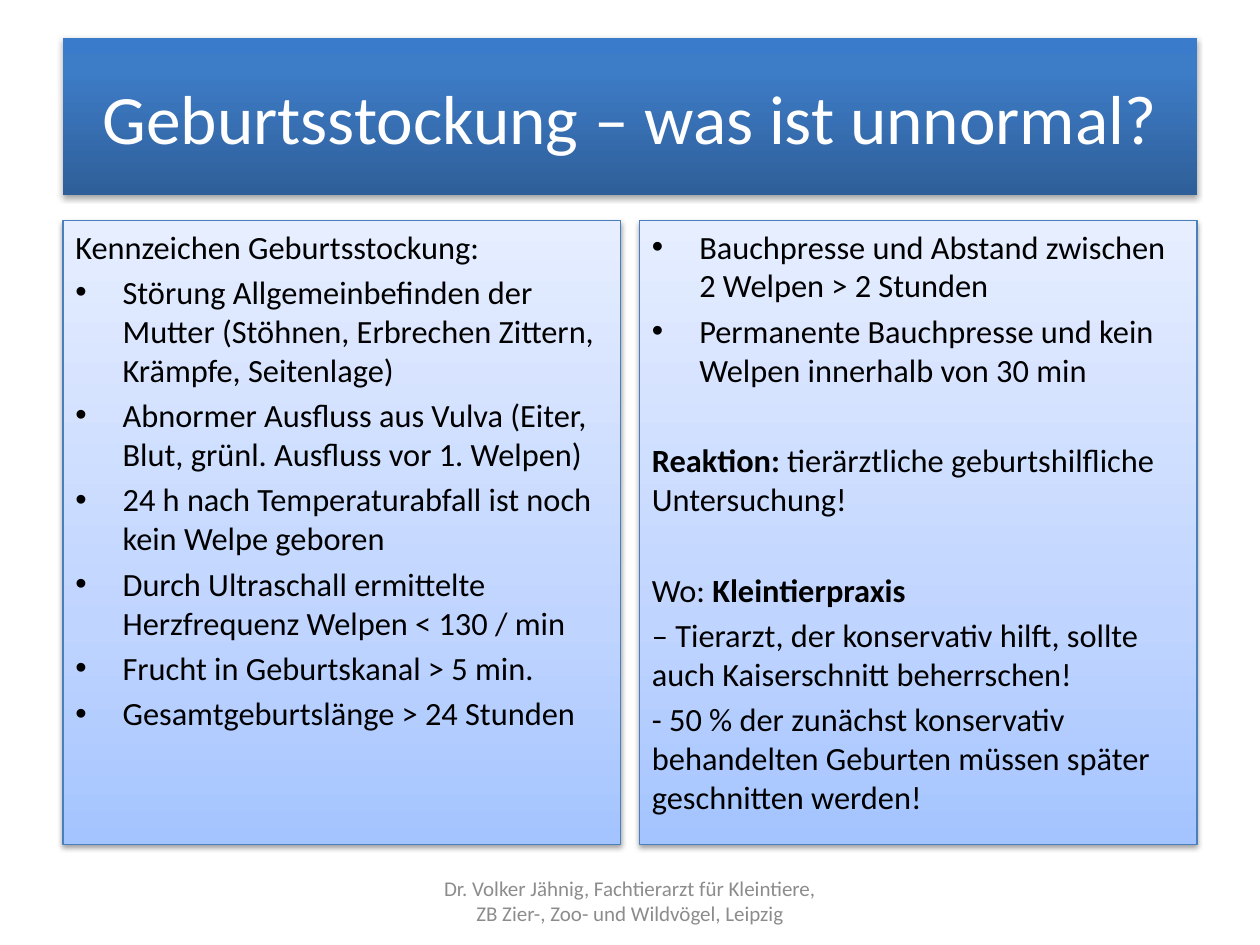
from lxml import etree
from pptx import Presentation
from pptx.dml.color import RGBColor
from pptx.enum.shapes import MSO_SHAPE
from pptx.enum.text import MSO_ANCHOR, MSO_AUTO_SIZE, PP_ALIGN
from pptx.oxml.ns import qn
from pptx.util import Pt

RECTANGLE = MSO_SHAPE.RECTANGLE
TOP, MIDDLE = MSO_ANCHOR.TOP, MSO_ANCHOR.MIDDLE
LEFT, CENTER = PP_ALIGN.LEFT, PP_ALIGN.CENTER
NO_AUTOFIT = MSO_AUTO_SIZE.NONE

BLACK = RGBColor(0x00, 0x00, 0x00)
WHITE = RGBColor(0xFF, 0xFF, 0xFF)
GRAY = RGBColor(0x8C, 0x8C, 0x8C)
BORDER_BLUE = RGBColor(0x4B, 0x7E, 0xBC)
# Gradient stops (percent, colour), running from the bottom to the top
TITLE_GRADIENT = [
    (0, RGBColor(0x2F, 0x5F, 0x99)),
    (80, RGBColor(0x3D, 0x7C, 0xC7)),
    (100, RGBColor(0x3A, 0x7C, 0xCB)),
]
PANEL_GRADIENT = [
    (0, RGBColor(0xA4, 0xC4, 0xFF)),
    (35, RGBColor(0xBF, 0xD4, 0xFF)),
    (100, RGBColor(0xE6, 0xEE, 0xFF)),
]

MARGIN = 36
PANEL_WIDTH = 318.5
SLIDE_WIDTH, SLIDE_HEIGHT = 720, 540

BULLET, PLAIN, NEW_SECTION = "bullet", "plain", "new section"
# Each paragraph: kind, then its runs; every second run is bold
SIGNS = [
    (PLAIN, "Kennzeichen Geburtsstockung:"),
    (BULLET, "Störung Allgemeinbefinden der Mutter (Stöhnen, Erbrechen Zittern, "
             "Krämpfe, Seitenlage)"),
    (BULLET, "Abnormer Ausfluss aus Vulva (Eiter, Blut, grünl. Ausfluss vor 1. Welpen)"),
    (BULLET, "24 h nach Temperaturabfall ist noch kein Welpe geboren"),
    (BULLET, "Durch Ultraschall ermittelte Herzfrequenz Welpen < 130 / min"),
    (BULLET, "Frucht in Geburtskanal > 5 min."),
    (BULLET, "Gesamtgeburtslänge > 24 Stunden"),
]
REACTION = [
    (BULLET, "Bauchpresse und Abstand zwischen 2 Welpen > 2 Stunden"),
    (BULLET, "Permanente Bauchpresse und kein Welpen innerhalb von 30 min"),
    (NEW_SECTION, "", "Reaktion: ", "tierärztliche geburtshilfliche Untersuchung!"),
    (NEW_SECTION, "Wo: ", "Kleintierpraxis"),
    (PLAIN, "– Tierarzt, der konservativ hilft, sollte auch Kaiserschnitt beherrschen!"),
    (PLAIN, "- 50 % der zunächst konservativ behandelten Geburten müssen später "
            "geschnitten werden!"),
]


class SlideBuilder:
    """Holds the text style and the slide being filled."""

    font_name = "Calibri"
    body_size = 18.5
    paragraph_gap = 3.7
    section_gap = 29.5
    bullet_indent = 27

    def __init__(self, presentation):
        self.slide = presentation.slides.add_slide(presentation.slide_layouts[5])

    def set_font(self, paragraph, size, color):
        paragraph.font.name = self.font_name
        paragraph.font.size = Pt(size)
        paragraph.font.color.rgb = color

    def prepare_frame(self, shape, anchor):
        frame = shape.text_frame
        frame.word_wrap = True
        frame.auto_size = NO_AUTOFIT
        frame.vertical_anchor = anchor
        return frame

    def place(self, shape, left, top, width, height):
        shape.left, shape.top = Pt(left), Pt(top)
        shape.width, shape.height = Pt(width), Pt(height)

    def fill_gradient(self, shape, stops):
        shape.fill.gradient()
        shape.fill.gradient_angle = 90
        stop_list = shape._element.spPr.find(qn("a:gradFill")).find(qn("a:gsLst"))
        for old_stop in list(stop_list):
            stop_list.remove(old_stop)
        for percent, color in stops:
            stop = etree.SubElement(stop_list, qn("a:gs"), pos=str(percent * 1000))
            etree.SubElement(stop, qn("a:srgbClr"), val=str(color))

    def add_shadow(self, shape, distance, opacity):
        shape.shadow.inherit = False
        effects = shape._element.spPr.find(qn("a:effectLst"))
        shadow = etree.SubElement(
            effects, qn("a:outerShdw"), blurRad=str(Pt(3.1)), dist=str(Pt(distance)),
            dir="5400000", rotWithShape="0")
        color = etree.SubElement(shadow, qn("a:srgbClr"), val=str(BLACK))
        etree.SubElement(color, qn("a:alpha"), val=str(opacity * 1000))

    def add_bullet(self, paragraph):
        properties = paragraph._p.get_or_add_pPr()
        properties.set("marL", str(Pt(self.bullet_indent)))
        properties.set("indent", str(-Pt(self.bullet_indent)))
        font = etree.Element(qn("a:buFont"), typeface="Arial")
        character = etree.Element(qn("a:buChar"), char="•")
        default_font = properties.find(qn("a:defRPr"))
        default_font.addprevious(font)
        default_font.addprevious(character)

    def title(self, text):
        shape = self.slide.shapes.title
        self.place(shape, MARGIN, 21.6, SLIDE_WIDTH - 2 * MARGIN, 90)
        self.fill_gradient(shape, TITLE_GRADIENT)
        shape.line.fill.background()
        self.add_shadow(shape, 1.8, 35)
        paragraph = self.prepare_frame(shape, MIDDLE).paragraphs[0]
        paragraph.text = text
        paragraph.alignment = CENTER
        self.set_font(paragraph, 39.6, WHITE)

    def panel(self, left, content):
        shape = self.slide.shapes.add_shape(
            RECTANGLE, Pt(left), Pt(126), Pt(PANEL_WIDTH), Pt(356.4))
        self.fill_gradient(shape, PANEL_GRADIENT)
        shape.line.color.rgb = BORDER_BLUE
        shape.line.width = Pt(0.75)
        self.add_shadow(shape, 1.6, 38)
        frame = self.prepare_frame(shape, TOP)
        for index, (kind, *runs) in enumerate(content):
            paragraph = frame.add_paragraph() if index else frame.paragraphs[0]
            paragraph.alignment = LEFT
            gap = self.section_gap if kind == NEW_SECTION else self.paragraph_gap
            paragraph.space_before = Pt(gap)
            self.set_font(paragraph, self.body_size, BLACK)
            if kind == BULLET:
                self.add_bullet(paragraph)
            for position, text in enumerate(runs):
                if text:
                    run = paragraph.add_run()
                    run.text = text
                    run.font.bold = position % 2 == 1

    def footer(self, text):
        shape = self.slide.shapes.add_textbox(Pt(246), Pt(500.5), Pt(228), Pt(28.75))
        paragraph = self.prepare_frame(shape, MIDDLE).paragraphs[0]
        paragraph.text = text
        paragraph.alignment = CENTER
        self.set_font(paragraph, 12, GRAY)


def main():
    presentation = Presentation()
    presentation.slide_width = Pt(SLIDE_WIDTH)
    presentation.slide_height = Pt(SLIDE_HEIGHT)
    builder = SlideBuilder(presentation)
    builder.title("Geburtsstockung – was ist unnormal?")
    builder.panel(MARGIN, SIGNS)
    builder.panel(SLIDE_WIDTH - MARGIN - PANEL_WIDTH, REACTION)
    builder.footer("Dr. Volker Jähnig, Fachtierarzt für Kleintiere, "
                   "ZB Zier-, Zoo- und Wildvögel, Leipzig")
    presentation.save("out.pptx")


if __name__ == "__main__":
    main()
